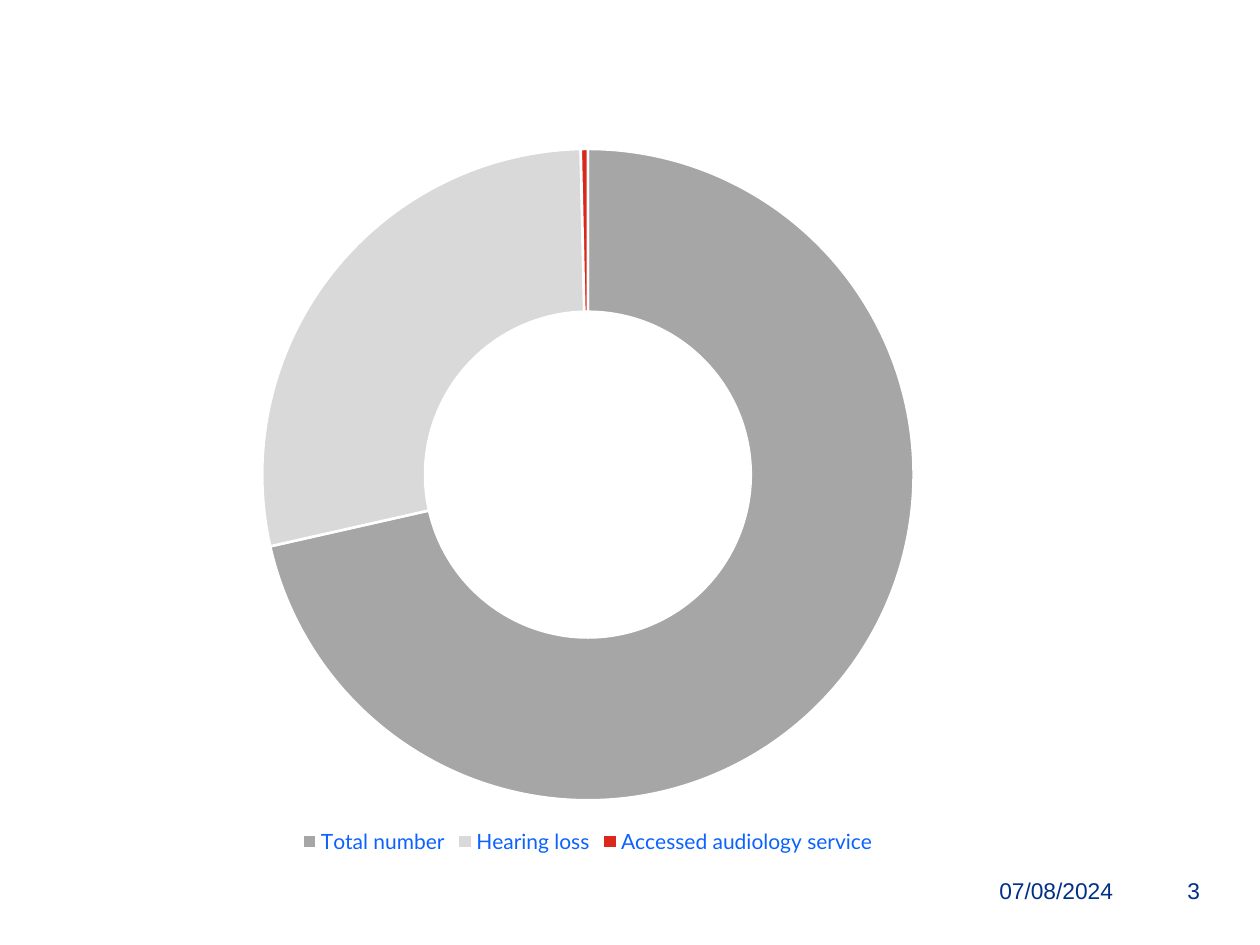
"""Build the audiology access slide."""
import lxml.etree
import pptx
import pptx.chart.data
import pptx.dml.color
import pptx.enum.chart
import pptx.enum.text
import pptx.oxml.ns
import pptx.util

EMU_PER_PX = 914400 // 126
COLOURS = {
    "white": "FFFFFF",
    "footer": "003087",
    "legend": "0B62FF",
    "Total number": "A6A6A6",
    "Hearing loss": "D9D9D9",
    "Accessed audiology service": "DA291C",
}
SHARES = {
    "Total number": 71,
    "Hearing loss": 28,
    "Accessed audiology service": 0.35,
}
RING_LAYOUT = {
    "layoutTarget": "inner",
    "xMode": "edge",
    "yMode": "edge",
    "x": 0.22,
    "y": 0.03,
    "w": 0.56,
    "h": 0.89,
}


def px(*lengths):
    """Turn pixel lengths into EMU."""
    return [pptx.util.Emu(length * EMU_PER_PX) for length in lengths]


def rgb(name):
    """Return the named colour."""
    return pptx.dml.color.RGBColor.from_string(COLOURS[name])


def apply_format(target, values):
    """Set each attribute in values on the target."""
    for attribute, value in values.items():
        setattr(target, attribute, value)


def style_font(font, name, size, colour):
    """Set the typeface, size and colour of a font."""
    apply_format(font, {"name": name, "size": pptx.util.Pt(size)})
    font.color.rgb = rgb(colour)


def add_footer(slide, words, box, align, inset=None):
    """Add one vertically centred footer text."""
    frame = slide.shapes.add_textbox(*px(*box)).text_frame
    apply_format(frame, {
        "word_wrap": True,
        "vertical_anchor": pptx.enum.text.MSO_ANCHOR.MIDDLE,
    })
    if inset is not None:
        sides = ("left", "top", "right", "bottom")
        apply_format(frame, {f"margin_{side}": inset for side in sides})
    line = frame.paragraphs[0]
    apply_format(line, {"text": words, "alignment": align})
    style_font(line.runs[0].font, "Arial", 13, "footer")


def place_ring(chart):
    """Fix the ring's place and its hole size."""
    qn = pptx.oxml.ns.qn
    plot_area = chart.element.find(".//" + qn("c:plotArea"))
    for old in plot_area.findall(qn("c:layout")):
        plot_area.remove(old)
    layout = lxml.etree.Element(qn("c:layout"))
    manual = lxml.etree.SubElement(layout, qn("c:manualLayout"))
    for tag, value in RING_LAYOUT.items():
        lxml.etree.SubElement(manual, qn(f"c:{tag}")).set("val", str(value))
    plot_area.insert(0, layout)
    plot_area.find(".//" + qn("c:holeSize")).set("val", "50")


def add_ring(slide, shares, box):
    """Add the doughnut chart with its legend."""
    share_data = pptx.chart.data.CategoryChartData()
    share_data.categories = list(shares)
    share_data.add_series("Series 1", list(shares.values()))
    kind = pptx.enum.chart.XL_CHART_TYPE.DOUGHNUT
    chart = slide.shapes.add_chart(kind, *px(*box), share_data).chart
    apply_format(chart, {"has_title": False, "has_legend": True})
    style_font(chart.font, "Lato", 10, "footer")
    apply_format(chart.legend, {
        "position": pptx.enum.chart.XL_LEGEND_POSITION.BOTTOM,
        "include_in_layout": False,
    })
    style_font(chart.legend.font, "Lato", 12, "legend")
    ring = chart.plots[0]
    ring.vary_by_categories = True
    for index, category in enumerate(shares):
        wedge = ring.series[0].points[index].format
        wedge.fill.solid()
        wedge.fill.fore_color.rgb = rgb(category)
        wedge.line.color.rgb = rgb("white")
        wedge.line.width = pptx.util.Pt(1.5)
    place_ring(chart)


def main():
    """Build and save the slide."""
    deck = pptx.Presentation()
    width, height = px(1260, 945)
    apply_format(deck, {"slide_width": width, "slide_height": height})
    slide = deck.slides.add_slide(deck.slide_layouts[6])
    align = pptx.enum.text.PP_ALIGN
    add_footer(slide, "07/08/2024", (987, 860, 149, 61), align.LEFT)
    add_footer(slide, "3", (1136, 860, 64, 61), align.RIGHT, inset=0)
    add_ring(slide, SHARES, (0, 127, 1176, 732))
    deck.save("out.pptx")


if __name__ == "__main__":
    main()
